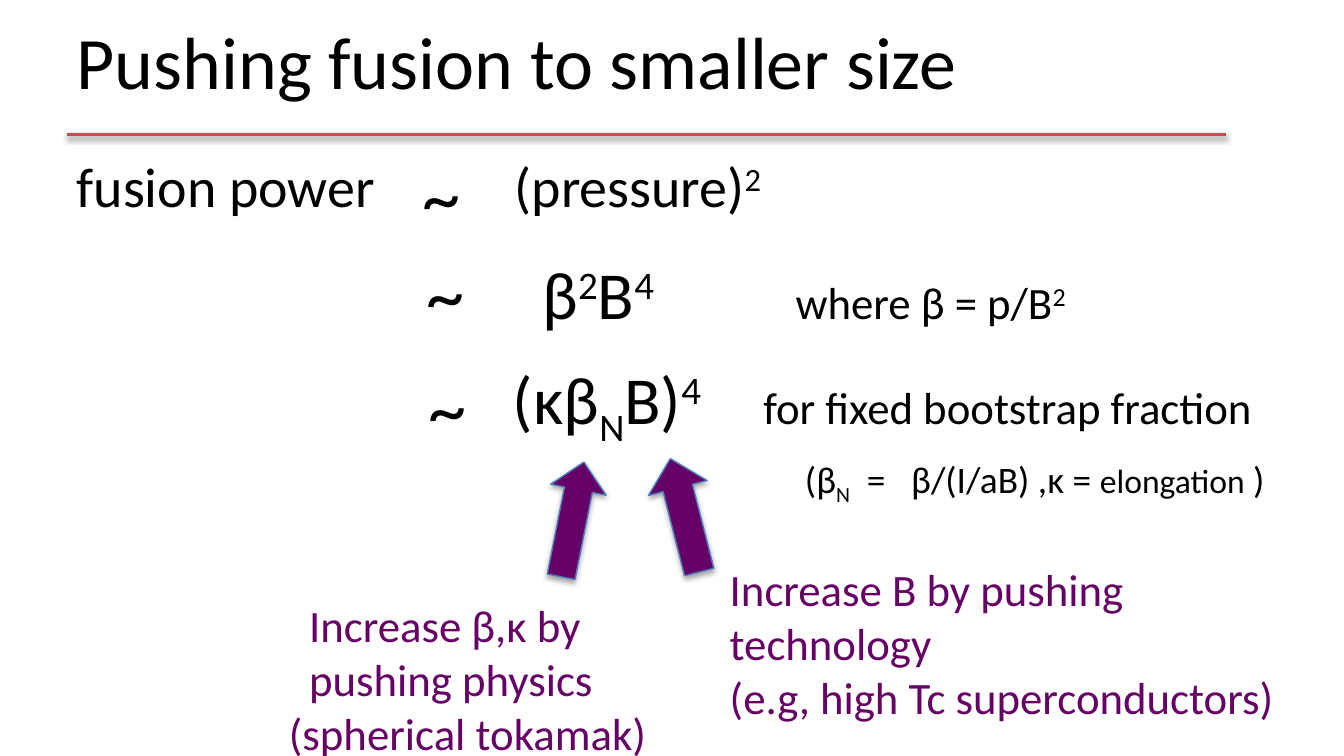
from pptx import Presentation
from pptx.dml.color import RGBColor
from pptx.enum.shapes import MSO_CONNECTOR as CONNECTOR, MSO_SHAPE as SHAPE
from pptx.enum.text import MSO_ANCHOR as ANCHOR
from pptx.oxml import parse_xml
from pptx.oxml.ns import nsdecls
from pptx.util import Inches, Pt

BLACK = RGBColor(0x00, 0x00, 0x00)
PURPLE = RGBColor(0x66, 0x00, 0x66)
RED = RGBColor(0xC0, 0x50, 0x4D)
BLUE = RGBColor(0x4B, 0x7E, 0xBC)
SUP, SUB = 30, -25

# Grid of 100 columns by 56.25 rows (16:9), with square cells
CELL = Inches(0.1)

prs = Presentation()
prs.slide_width, prs.slide_height = int(100 * CELL), int(56.25 * CELL)
slide = prs.slides.add_slide(prs.slide_layouts[6])
shapes = slide.shapes


def add_text(box, lines, color=BLACK):
    """Each line is (tab stops in cells, [(text, size, baseline), ...])."""
    frame = shapes.add_textbox(*(int(n * CELL) for n in box)).text_frame
    frame.word_wrap = True
    frame.margin_left = frame.margin_right = Inches(0.07)
    frame.margin_top = frame.margin_bottom = Inches(0.04)
    for i, (stops, parts) in enumerate(lines):
        para = frame.add_paragraph() if i else frame.paragraphs[0]
        if stops:
            tabs = "".join(f'<a:tab pos="{int(s * CELL)}" algn="l"/>' for s in stops)
            para._p.get_or_add_pPr().append(
                parse_xml(f'<a:tabLst {nsdecls("a")}>{tabs}</a:tabLst>'))
        for text, size, baseline in parts:
            run = para.add_run()
            run.text = text
            run.font.name, run.font.size = "Calibri", Pt(size)
            run.font.color.rgb = color
            if baseline:
                run._r.get_or_add_rPr().set("baseline", str(baseline * 1000))
    return frame


def add_shadow(shape, opacity, offset):
    shape._element.spPr.append(parse_xml(
        f'<a:effectLst {nsdecls("a")}><a:outerShdw blurRad="{Pt(3.1)}" '
        f'dist="{Pt(offset)}" dir="5400000" rotWithShape="0"><a:srgbClr val="000000">'
        f'<a:alpha val="{opacity * 1000}"/></a:srgbClr></a:outerShdw></a:effectLst>'))


# Title and rule
title = add_text((5, 2.5, 86.2, 5.6),
                 [((), [("Pushing fusion to smaller size", 39.6, 0)])])
title.vertical_anchor = ANCHOR.MIDDLE
title.paragraphs[0].line_spacing = 0.7
rule = shapes.add_connector(CONNECTOR.STRAIGHT, int(5 * CELL), int(10 * CELL),
                            int(91.2 * CELL), int(10 * CELL))
rule.line.color.rgb, rule.line.width = RED, Pt(2)
add_shadow(rule, 38, 1.6)

# Scaling relations, one row each
add_text((5, 10.9, 71.1, 10.9), [
    ((32.6,), [("fusion power\t(pressure)", 30, 0), ("2", 30, SUP)])])
add_text((15.1, 18.4, 81.8, 12.9), [
    ((24.55, 43.4), [("\tβ", 36, 0), ("2", 36, SUP), ("B", 36, 0), ("4", 36, SUP),
                     ("\twhere β = p/B", 24, 0), ("2", 24, SUP)])])
scaling = add_text((9.6, 26.2, 86.4, 21), [
    ((27.85, 46.5), [("\t(κβ", 36, 0), ("N", 36, SUB), ("B)", 36, 0), ("4", 36, SUP),
                     ("\tfor fixed bootstrap fraction", 24, 0)]),
    ((49.6, 54.2, 57.5), [("\t(β", 20, 0), ("N", 20, SUB),
                          ("\t=\tβ/(I/aB) ,κ = ", 20, 0),
                          ("elongation", 18, 0), (" )", 20, 0)])])
scaling.paragraphs[1].space_before = Pt(3.5)

# Proportionality signs
for left, top, width, height in ((30.7, 10.6, 4.1, 17.6), (31, 17.9, 11.4, 7.7),
                                 (31.2, 26.4, 11.4, 7.7)):
    add_text((left, top, width, height), [((), [("~", 41, 0)])])

# Arrows up to the two factors
for left, top, width, angle in ((40.5, 34.3, 4.2, 11.2), (48.7, 34, 4.5, 345.7)):
    arrow = shapes.add_shape(SHAPE.UP_ARROW, int(left * CELL), int(top * CELL),
                             int(width * CELL), int(8.7 * CELL))
    arrow.rotation = angle
    arrow.fill.solid()
    arrow.fill.fore_color.rgb = PURPLE
    arrow.line.color.rgb, arrow.line.width = BLUE, Pt(0.75)
    add_shadow(arrow, 35, 1.8)

# Ways to raise each factor
physics = add_text((20.8, 44.1, 43.4, 15.9), [
    ((), [(line, 24, 0)]) for line in
    ("Increase β,κ by", "pushing physics", "(spherical tokamak)")], PURPLE)
for para in physics.paragraphs[:2]:
    para._p.get_or_add_pPr().set("marL", str(int(1.5 * CELL)))
add_text((53.6, 41.4, 43.3, 12.9), [
    ((), [(line, 24, 0)]) for line in
    ("Increase B by pushing technology", "(e.g, high Tc superconductors)")], PURPLE)

prs.save("out.pptx")
